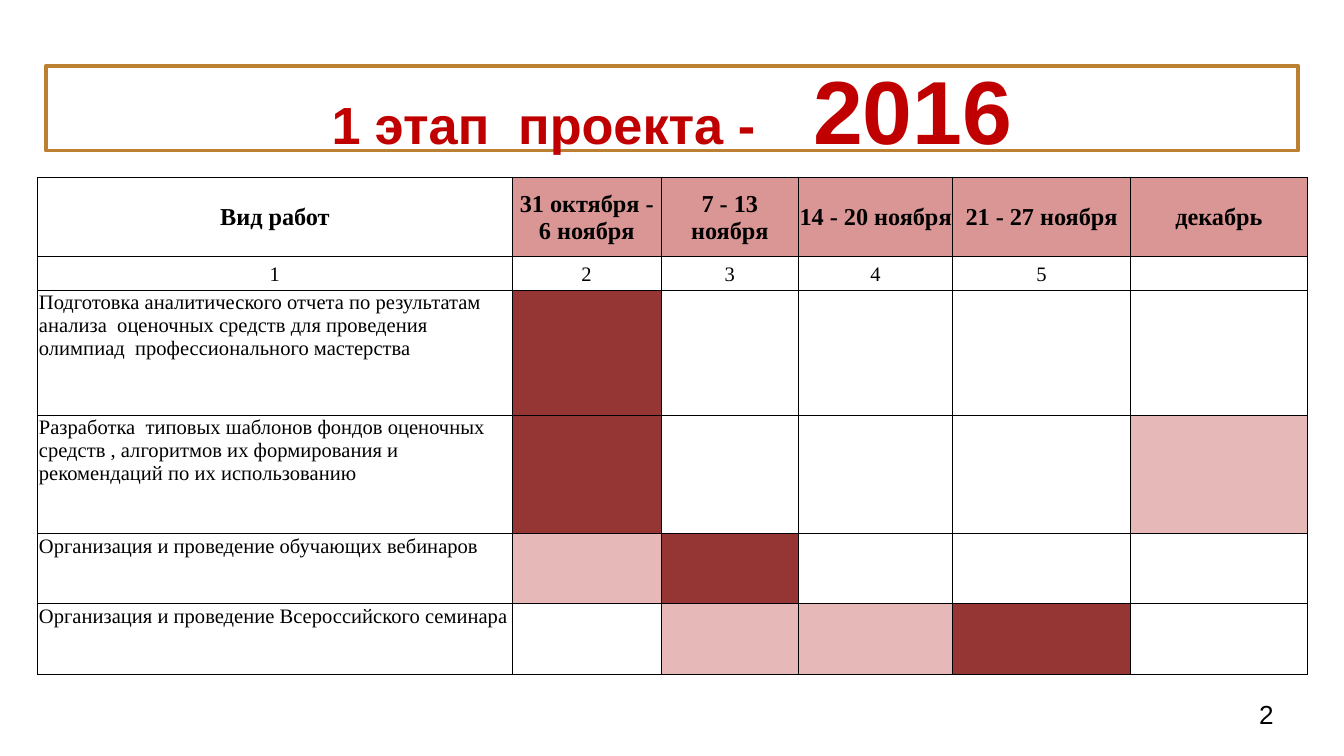
from lxml.etree import SubElement
from pptx import Presentation
from pptx.dml.color import RGBColor
from pptx.enum.text import MSO_ANCHOR, MSO_AUTO_SIZE, PP_ALIGN
from pptx.oxml.ns import qn
from pptx.util import Inches, Pt

COLORS = {
    "black": "000000",
    "white": "FFFFFF",
    "gold": "BC8032",
    "red": "C00000",
    "head": "DA9694",
    "main": "963634",
    "side": "E6B8B7",
}
SERIF = "Times New Roman"
COLS = [3.53, 1.11, 1.02, 1.15, 1.32, 1.32]
ROWS = [0.59, 0.25, 0.93, 0.88, 0.52, 0.53]
HEADS = ["Вид работ", "31 октября - 6 ноября", "7 - 13 ноября",
         "14 - 20 ноября", "21 - 27 ноября", "декабрь"]
MARKS = ["1", "2", "3", "4", "5", ""]
# Each task with the fills of its periods, by column
TASKS = [
    ("Подготовка аналитического отчета по результатам анализа  оценочных "
     "средств для проведения олимпиад  профессионального мастерства",
     {1: "main"}),
    ("Разработка  типовых шаблонов фондов оценочных средств , алгоритмов "
     "их формирования и рекомендаций по их использованию",
     {1: "main", 5: "side"}),
    ("Организация и проведение обучающих вебинаров",
     {1: "side", 2: "main"}),
    ("Организация и проведение Всероссийского семинара",
     {2: "side", 3: "side", 4: "main"}),
]


def rgb(name):
    return RGBColor.from_string(COLORS[name])


def paint(item, name):
    item.fill.solid()
    item.fill.fore_color.rgb = rgb(name)


def write(para, text, size=11, font="Arial", color="black", bold=False,
          align=PP_ALIGN.LEFT):
    para.alignment = align
    run = para.add_run()
    run.text = text
    run.font.size = Pt(size)
    run.font.name = font
    run.font.bold = bold
    run.font.color.rgb = rgb(color)


def inset(item, left, top, right, low):
    item.margin_left, item.margin_top = Inches(left), Inches(top)
    item.margin_right, item.margin_bottom = Inches(right), Inches(low)


def edge(cell):
    """Draw a thin black line on all four sides of a cell."""
    props = cell._tc.get_or_add_tcPr()
    for spot, side in enumerate(("a:lnL", "a:lnR", "a:lnT", "a:lnB")):
        line = props.makeelement(qn(side), {"w": str(Pt(0.5))})
        fill = SubElement(line, qn("a:solidFill"))
        SubElement(fill, qn("a:srgbClr"), val=COLORS["black"])
        props.insert(spot, line)


def fill_cell(cell, text="", fill=None, anchor=MSO_ANCHOR.TOP, **style):
    inset(cell, 0.01, 0.01, 0.01, 0)
    cell.vertical_anchor = anchor
    if fill:
        paint(cell, fill)
    else:
        cell.fill.background()
    edge(cell)
    para = cell.text_frame.paragraphs[0]
    if text:
        write(para, text, font=SERIF, **style)
    else:
        SubElement(para._p, qn("a:endParaRPr"), sz="1100")


def add_title(slide):
    title = slide.shapes.title
    title.left, title.top = Inches(0.34), Inches(0.49)
    title.width, title.height = Inches(9.32), Inches(0.63)
    paint(title, "white")
    title.line.color.rgb = rgb("gold")
    title.line.width = Pt(2)
    frame = title.text_frame
    frame.auto_size = MSO_AUTO_SIZE.NONE
    frame.vertical_anchor = MSO_ANCHOR.MIDDLE
    inset(frame, 0.1, 0.1, 0.1, 0.1)
    for text, size in (("1 этап  проекта -    ", 28), ("2016", 48)):
        write(frame.paragraphs[0], text, size=size, color="red", bold=True,
              align=PP_ALIGN.CENTER)


def add_plan(slide):
    table = slide.shapes.add_table(
        len(ROWS), len(COLS), Inches(0.28), Inches(1.32),
        Inches(sum(COLS)), Inches(sum(ROWS))).table
    table.first_row = table.horz_banding = False
    for col, width in zip(table.columns, COLS):
        col.width = Inches(width)
    for row, height in zip(table.rows, ROWS):
        row.height = Inches(height)
    mid = {"anchor": MSO_ANCHOR.MIDDLE, "align": PP_ALIGN.CENTER}
    for col, (head, mark) in enumerate(zip(HEADS, MARKS)):
        fill_cell(table.cell(0, col), head, fill="head" if col else None,
                  size=13, bold=True, **mid)
        fill_cell(table.cell(1, col), mark, **mid)
    for row, (task, fills) in enumerate(TASKS, 2):
        for col in range(len(COLS)):
            fill_cell(table.cell(row, col), "" if col else task,
                      fill=fills.get(col))
    paint(table.cell(len(ROWS) - 1, len(COLS) - 1), "white")


def add_number(slide):
    box = slide.shapes.add_textbox(
        Inches(9.27), Inches(5.1), Inches(0.6), Inches(0.43))
    frame = box.text_frame
    frame.word_wrap = True
    frame.vertical_anchor = MSO_ANCHOR.MIDDLE
    inset(frame, 0.1, 0.1, 0.1, 0.1)
    write(frame.paragraphs[0], "2", size=14)


def main():
    deck = Presentation()
    deck.slide_width = Inches(10)
    deck.slide_height = deck.slide_width * 9 // 16
    slide = deck.slides.add_slide(deck.slide_layouts[5])
    add_title(slide)
    add_plan(slide)
    add_number(slide)
    deck.save("out.pptx")


if __name__ == "__main__":
    main()
